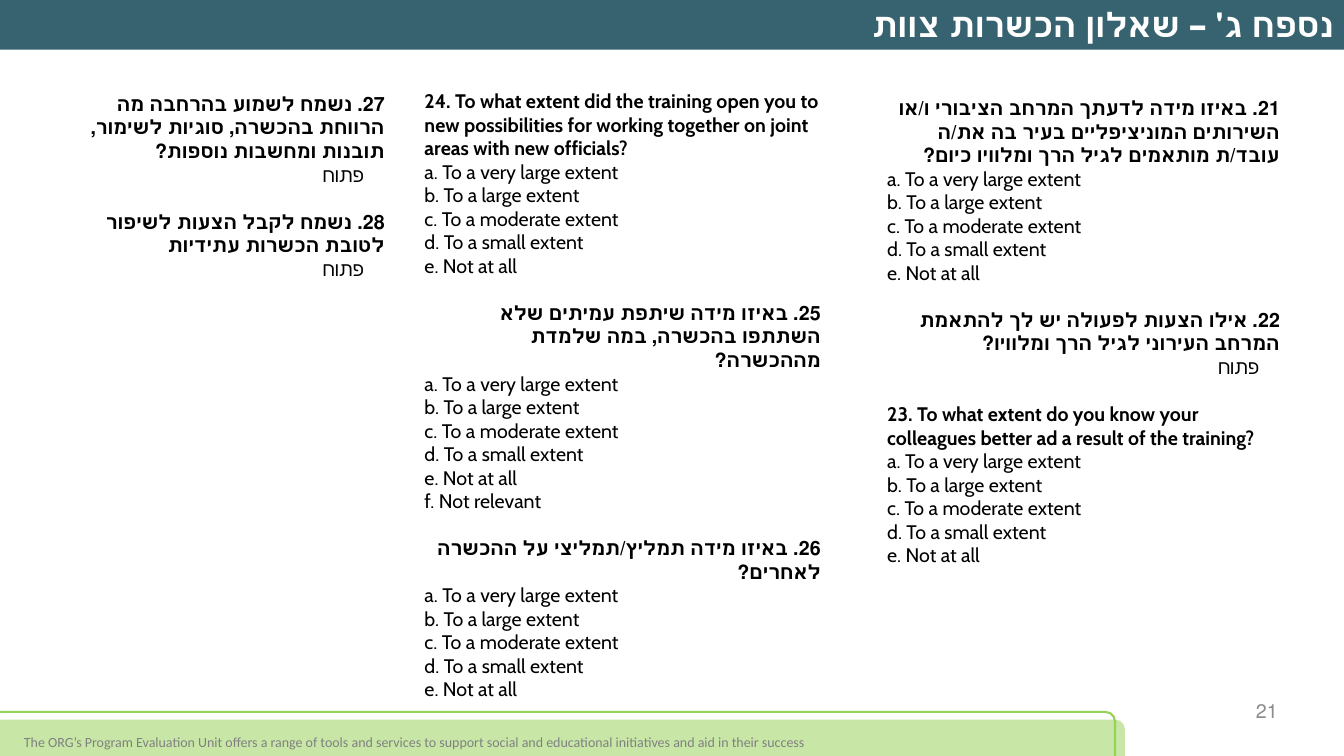
from lxml.etree import SubElement
from pptx import Presentation
from pptx.dml.color import RGBColor
from pptx.enum.shapes import MSO_SHAPE
from pptx.enum.text import MSO_ANCHOR, MSO_AUTO_SIZE, PP_ALIGN
from pptx.oxml.ns import qn
from pptx.util import Pt

COLORS = {"banner": "36636F", "white": "FFFFFF", "black": "000000", "green": "C8E7A7",
          "outline": "97D258", "footer": "808080", "number": "8C8C8C"}

EXTENT = ["a. To a very large extent", "b. To a large extent", "c. To a moderate extent",
          "d. To a small extent", "e. Not at all"]
OPEN = "פתוח"
LINE_HEIGHT = 16.8

RIGHT_COLUMN = [
    ("21. באיזו מידה לדעתך המרחב הציבורי ו/או השירותים המוניציפליים בעיר בה את/ה "
     "עובד/ת מותאמים לגיל הרך ומלוויו כיום?", True, EXTENT),
    ("22. אילו הצעות לפעולה יש לך להתאמת המרחב העירוני לגיל הרך ומלוויו?", True, [OPEN]),
    ("23. To what extent do you know your colleagues better ad a result of the training?",
     False, EXTENT),
]
MIDDLE_COLUMN = [
    ("24. To what extent did the training open you to new possibilities for working "
     "together on joint areas with new officials?", False, EXTENT),
    ("25. באיזו מידה שיתפת עמיתים שלא השתתפו בהכשרה, במה שלמדת מההכשרה?", True,
     EXTENT + ["f. Not relevant"]),
    ("26. באיזו מידה תמליץ/תמליצי על ההכשרה לאחרים?", True, EXTENT),
]
LEFT_COLUMN = [
    ("27. נשמח לשמוע בהרחבה מה הרווחת בהכשרה, סוגיות לשימור, תובנות ומחשבות נוספות?",
     True, [OPEN]),
    ("28. נשמח לקבל הצעות לשיפור לטובת הכשרות עתידיות", True, [OPEN]),
]


def color(name):
    """Return the named colour."""
    return RGBColor.from_string(COLORS[name])


def place(shape, box):
    """Move a shape to a box of left, top, width and height in points."""
    shape.left, shape.top, shape.width, shape.height = map(Pt, box)


def prepare(shape, anchor):
    """Set wrapping, fitting and vertical anchor, and return the text frame."""
    frame = shape.text_frame
    frame.word_wrap = True
    frame.auto_size = MSO_AUTO_SIZE.NONE
    frame.vertical_anchor = anchor
    return frame


def write(frame, text, font, size, fill, bold=False, rtl=False,
          align=PP_ALIGN.LEFT, before=0, indent=0):
    """Write one formatted paragraph, filling the empty first one if there is one."""
    first = frame.paragraphs[0]
    para = frame.add_paragraph() if first.runs else first
    para.alignment = align
    para.space_before = Pt(before)
    properties = para._p.get_or_add_pPr()
    properties.set("marL", str(Pt(indent)))
    properties.set("indent", "0")
    properties.set("rtl", "1" if rtl else "0")
    SubElement(properties, qn("a:buNone"))
    span = para.add_run()
    span.text = text
    span.font.name = font
    span.font.size = Pt(size)
    span.font.bold = bold
    span.font.color.rgb = color(fill)


def add_banner(title, box):
    """Turn the title placeholder into the top banner."""
    place(title, box)
    title.fill.solid()
    title.fill.fore_color.rgb = color("banner")
    write(prepare(title, MSO_ANCHOR.MIDDLE), "נספח ג' – שאלון הכשרות צוות", "Lato", 24,
          "white", bold=True, rtl=True, align=PP_ALIGN.RIGHT)


def add_questions(column, box, questions):
    """Fill a body placeholder with questions and their answers."""
    place(column, box)
    frame = prepare(column, MSO_ANCHOR.TOP)
    for index, (question, rtl, answers) in enumerate(questions):
        write(frame, question, "Cabin", 14, "black", bold=True, rtl=rtl,
              align=PP_ALIGN.RIGHT if rtl else PP_ALIGN.LEFT,
              before=LINE_HEIGHT if index else 0)
        for answer in answers:
            is_open = answer == OPEN
            write(frame, answer, "Cabin", 14, "black", rtl=is_open,
                  align=PP_ALIGN.RIGHT if is_open else PP_ALIGN.LEFT,
                  indent=15 if is_open else 0)


def add_footer(page, box):
    """Draw the filled tab, its offset outline and the footer line."""
    left, top, width, height = box
    group = page.shapes.add_group_shape()
    tab = group.shapes.add_shape(MSO_SHAPE.ROUNDED_RECTANGLE, *map(Pt, box))
    tab.fill.solid()
    tab.fill.fore_color.rgb = color("green")
    tab.line.fill.background()
    outline_box = (left + 3.5, top - 5.5, width - 10.5, height)
    outline = group.shapes.add_shape(MSO_SHAPE.ROUNDED_RECTANGLE, *map(Pt, outline_box))
    outline.fill.background()
    outline.line.color.rgb = color("outline")
    outline.line.width = Pt(1.5)
    for shape in (tab, outline):
        shape.shadow.inherit = False
    caption_box = (left + 19.5, top + 6.5, 763, 19.5)
    caption = group.shapes.add_textbox(*map(Pt, caption_box))
    write(prepare(caption, MSO_ANCHOR.TOP),
          "The ORG’s Program Evaluation Unit offers a range of tools and services to support "
          "social and educational initiatives and aid in their success",
          "Calibri", 10, "footer")


def add_page_number(page, box):
    """Write the page number."""
    number = page.shapes.add_textbox(*map(Pt, box))
    write(prepare(number, MSO_ANCHOR.MIDDLE), "21", "Calibri", 14, "number", rtl=True)


def main():
    """Build and save the questionnaire slide."""
    deck = Presentation()
    deck.slide_width, deck.slide_height = Pt(960), Pt(540)
    page = deck.slides.add_slide(deck.slide_layouts.get_by_name("Comparison"))
    title, right, middle, left, spare = page.placeholders
    spare.element.getparent().remove(spare.element)
    add_banner(title, (0, -0.5, 960, 36))
    add_footer(page, (-9.5, 514, 813, 41))
    add_questions(right, (626.5, 65, 295, 380), RIGHT_COLUMN)
    add_questions(middle, (296, 60, 297.5, 432), MIDDLE_COLUMN)
    add_questions(left, (38, 62, 244, 143), LEFT_COLUMN)
    add_page_number(page, (890, 493, 50, 29))
    deck.save("out.pptx")


if __name__ == "__main__":
    main()
